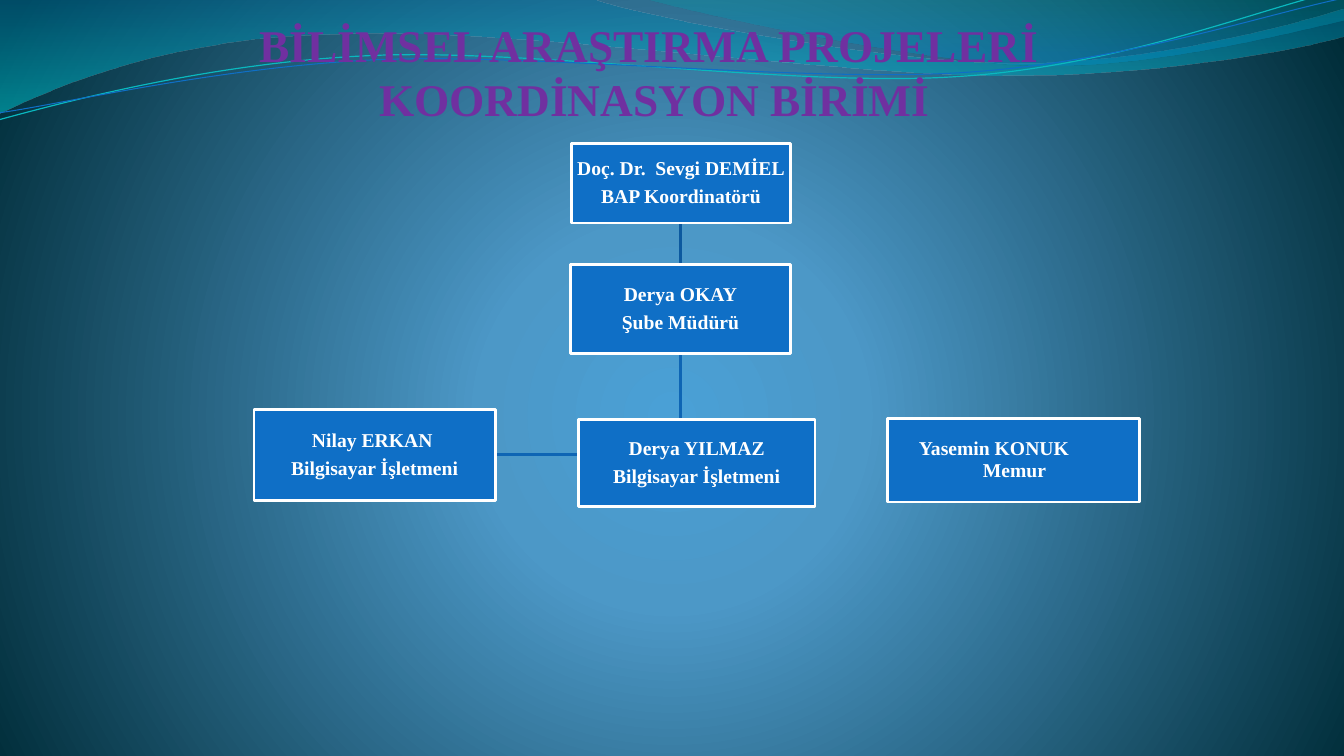
"""Build the organisation chart slide of the research projects office."""
from dataclasses import dataclass

from lxml import etree
from pptx import Presentation
from pptx import util as u
from pptx.dml.color import RGBColor
from pptx.enum import shapes, text
from pptx.oxml.ns import qn


@dataclass(frozen=True)
class Theme:
    """Colours, font and type sizes of the slide."""
    font: str = "Times New Roman"
    title_size: float = 32.4
    box_size: float = 14
    title: str = "7030A0"
    box: str = "0F6FC6"
    white: str = "FFFFFF"
    cyan: str = "0AB8BF"
    link_dark: str = "0C599F"
    link: str = "0E65B4"
    backdrop: tuple = ((0, "4AA0D6", 100), (25, "4C98C7", 100), (100, "002C38", 100))
    wide_wave: tuple = ((0, "0074A1", 45), (100, "00C6CF", 55))
    top_wave: tuple = ((0, "00A1A9", 30), (80, "008BBF", 45))


WIDE_WAVE = [
    (0, 0), (14.91, -0.03), (16.1, 0.43, 22.48, 1.6, 25.68, 1.6),
    (28.91, 1.6, 32.46, 0.66, 33.86, 0.23), (33.91, 0.91),
    (33.3, 1.12, 29.46, 1.93, 25.25, 1.91), (21.06, 1.91, 12.93, 0.71, 8.71, 0.86),
    (4.37, 0.91, 1.55, 2.11, -0.03, 2.87),
]
TOP_WAVE = [
    (16.23, -0.03), (17.25, 0.28, 23.09, 1.57, 26.04, 1.65),
    (28.98, 1.75, 32.56, 0.81, 33.86, 0.53), (33.86, 0),
]
CYAN_LINE = [
    (-0.03, 3.02), (1.63, 2.57, 5.36, 1.57, 9.37, 1.4),
    (13.39, 1.22, 20.07, 2.21, 24.13, 1.93), (28.19, 1.68, 31.8, 0.2, 33.81, -0.25),
]
BLUE_LINE = [
    (0, 2.84), (1.6, 2.62, 5.54, 1.68, 9.6, 1.5),
    (13.64, 1.35, 20.22, 2.08, 24.26, 1.83), (28.32, 1.57, 31.88, 0.36, 33.88, -0.05),
]
UPPER_LINK = [(17.15, 5.61), (17.15, 6.66)]
LOWER_LINK = [(17.15, 8.92), (17.15, 11.46), (12.5, 11.46)]


def bend(shape, outline):
    """Turn the segments that have control points into cubic curves."""
    left, top = (min(point[axis] for point in outline) for axis in (-2, -1))
    segments = list(shape._element.iter(qn("a:lnTo")))
    for segment, (*controls, x, y) in zip(segments, outline[1:]):
        if not controls:
            continue
        curve = etree.Element(qn("a:cubicBezTo"))
        values = (*controls, x, y)
        for across, down in zip(values[::2], values[1::2]):
            etree.SubElement(curve, qn("a:pt"), x=str(round((across - left) * 100)),
                             y=str(round((down - top) * 100)))
        segment.getparent().replace(segment, curve)


def widen(shape, pad):
    """Give an upright line a frame that reaches a little to both sides."""
    shape.left, shape.width = shape.left - u.Cm(pad), u.Cm(2 * pad)
    next(shape._element.iter(qn("a:path"))).set("w", str(round(200 * pad)))
    for point in shape._element.iter(qn("a:pt")):
        point.set("x", str(round(100 * pad)))


def set_gradient(owner, fill, stops, focus=None):
    """Give a fill its colour stops, vertical or spreading from a focus."""
    fill.gradient()
    gradient = next(owner.iter(qn("a:gradFill")))
    for child in list(gradient):
        gradient.remove(child)
    stop_list = etree.SubElement(gradient, qn("a:gsLst"))
    for position, colour, opacity in stops:
        stop = etree.SubElement(stop_list, qn("a:gs"), pos=str(position * 1000))
        tint = etree.SubElement(stop, qn("a:srgbClr"), val=colour)
        etree.SubElement(tint, qn("a:alpha"), val=str(opacity * 1000))
    if focus:
        spread = etree.SubElement(gradient, qn("a:path"), path="circle")
        etree.SubElement(spread, qn("a:fillToRect"),
                         {side: str(share * 1000) for side, share in zip("ltrb", focus)})
    else:
        etree.SubElement(gradient, qn("a:lin"), ang="5400000", scaled="1")


def write(para, words, *, font, size, colour, align=text.PP_ALIGN.CENTER,
          spacing=1.0, after=0, first=0, rest=0):
    """Write bold words into a paragraph, breaking at each newline."""
    para.alignment, para.line_spacing, para.space_after = align, spacing, u.Pt(after)
    if rest:
        settings = para._p.get_or_add_pPr()
        settings.set("marL", str(u.Cm(rest)))
        settings.set("indent", str(u.Cm(first - rest)))
    for number, line in enumerate(words.split("\n")):
        if number:
            para.add_line_break()
        span = para.add_run()
        span.text = line
        span.font.name, span.font.size, span.font.bold = font, u.Pt(size), True
        span.font.color.rgb = RGBColor.from_string(colour)


class ChartPage:
    """One slide together with the style of its elements."""

    def __init__(self, page, theme):
        """Keep the slide and theme, and paint the background."""
        self.page, self.theme = page, theme
        set_gradient(page.background._cSld, page.background.fill, theme.backdrop,
                     focus=(10, 110, 10, 100))

    def stroke(self, line, colour, width):
        """Style a line."""
        line.color.rgb = RGBColor.from_string(colour)
        line.width = u.Pt(width)

    def outline(self, points, *, stops=None, colour=None, width=0.75):
        """Draw a gradient wave or an open line."""
        start, *ends = [(point[-2] * 100, point[-1] * 100) for point in points]
        builder = self.page.shapes.build_freeform(*start, scale=u.Cm(1) / 100)
        builder.add_line_segments(ends, close=bool(stops))
        shape = builder.convert_to_shape()
        shape.shadow.inherit = False
        bend(shape, points)
        if not shape.width:
            widen(shape, 0.13)
        if stops:
            set_gradient(shape._element, shape.fill, stops)
            shape.line.fill.background()
        else:
            shape.fill.background()
            self.stroke(shape.line, colour, width)

    def frame(self, shape, inset):
        """Prepare the text frame of a shape."""
        frame = shape.text_frame
        frame.word_wrap = True
        frame.vertical_anchor = text.MSO_ANCHOR.MIDDLE
        frame.margin_left = frame.margin_right = u.Cm(inset)
        frame.margin_top = frame.margin_bottom = u.Cm(inset)
        return frame

    def title(self, words, place):
        """Add the heading."""
        frame = self.frame(self.page.shapes.add_textbox(*map(u.Cm, place)), 0)
        write(frame.paragraphs[0], words, font=self.theme.font, size=self.theme.title_size,
              colour=self.theme.title, spacing=u.Pt(38.6))

    def person(self, lines, place, **layout):
        """Add a box that presents a person."""
        box = self.page.shapes.add_shape(shapes.MSO_SHAPE.RECTANGLE, *map(u.Cm, place))
        box.shadow.inherit = False
        box.fill.solid()
        box.fill.fore_color.rgb = RGBColor.from_string(self.theme.box)
        self.stroke(box.line, self.theme.white, 2)
        frame = self.frame(box, 0.03)
        for number, words in enumerate(lines):
            para = frame.add_paragraph() if number else frame.paragraphs[0]
            write(para, words, font=self.theme.font, size=self.theme.box_size,
                  colour=self.theme.white, spacing=0.9, after=4.9, **layout)


def main():
    """Build and save the deck."""
    deck = Presentation()
    deck.slide_width, deck.slide_height = u.Cm(33.87), u.Cm(19.05)
    theme = Theme()
    chart = ChartPage(deck.slides.add_slide(deck.slide_layouts[6]), theme)
    chart.outline(WIDE_WAVE, stops=theme.wide_wave)
    chart.outline(TOP_WAVE, stops=theme.top_wave)
    chart.outline(CYAN_LINE, colour=theme.cyan, width=0.85)
    chart.outline(BLUE_LINE, colour=theme.box)
    chart.title("BİLİMSEL ARAŞTIRMA PROJELERİ\n KOORDİNASYON BİRİMİ", (1.96, 0.42, 28.78, 2.76))
    chart.outline(LOWER_LINK, colour=theme.link, width=2)
    chart.outline(UPPER_LINK, colour=theme.link_dark, width=2)
    operator = "Bilgisayar İşletmeni"
    chart.person(["Doç. Dr.  Sevgi DEMİEL", "BAP Koordinatörü"], (14.4, 3.61, 5.53, 2.01))
    chart.person(["Derya OKAY", "Şube Müdürü"], (14.38, 6.67, 5.54, 2.24))
    chart.person(["Nilay ERKAN ", operator], (6.4, 10.32, 6.09, 2.29))
    chart.person(["Derya YILMAZ", operator], (14.58, 10.57, 5.96, 2.2))
    chart.person(["Yasemin KONUK\nMemur"], (22.37, 10.54, 6.35, 2.11),
                 align=text.PP_ALIGN.LEFT, first=0.76, rest=2.37)
    deck.save("out.pptx")


if __name__ == "__main__":
    main()
